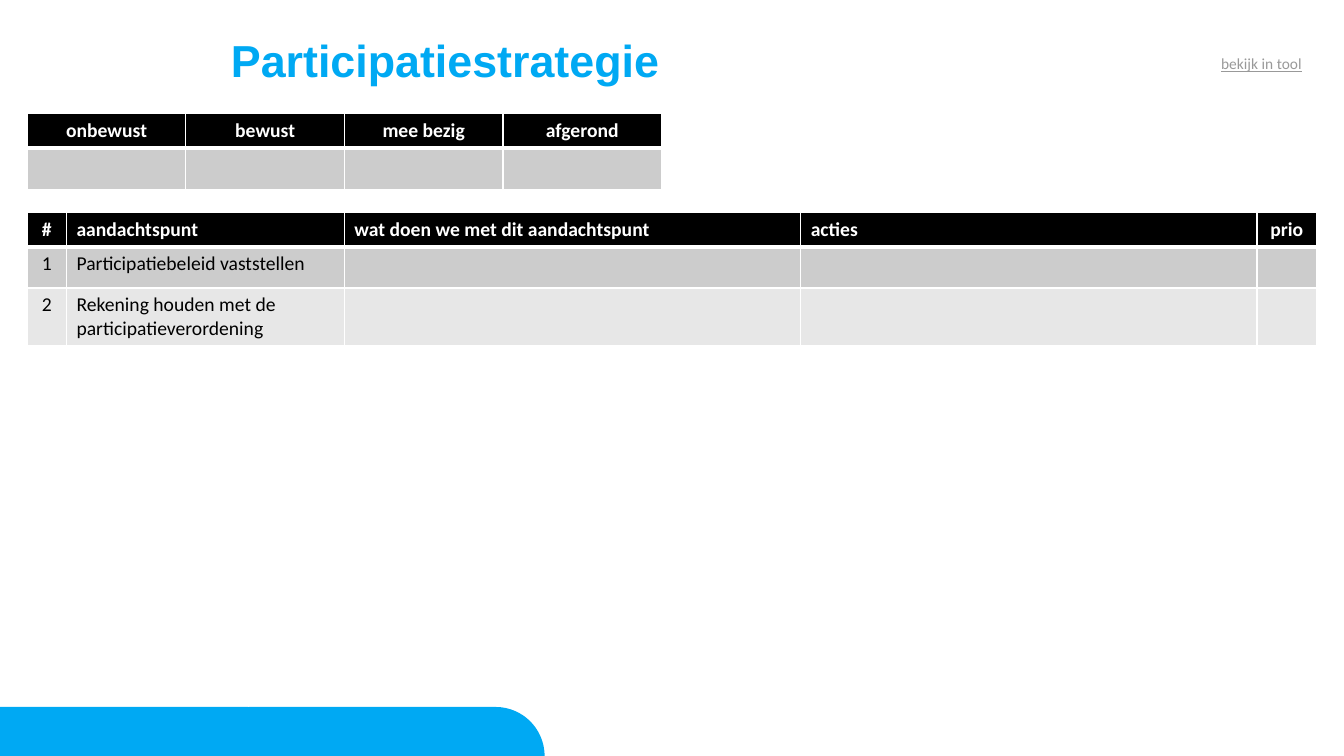
import math
from lxml import etree
from pptx import Presentation
from pptx import util as u
from pptx.dml.color import RGBColor
from pptx.enum import text
from pptx.oxml import ns

COLORS = {
    "blue": "00A9F3",
    "black": "000000",
    "white": "FFFFFF",
    "gray": "999999",
    "band_dark": "CCCCCC",
    "band_light": "E7E7E7",
}


class SlideBuilder:
    body_font = "Calibri"
    title_font = "Arial"
    table_size = 14
    thin, thick = 1, 3

    def __init__(self, slide):
        self.slide = slide

    def color(self, name):
        return RGBColor.from_string(COLORS[name])

    def style(self, paragraph, font_name, size, color, bold=False, underline=None):
        font = paragraph.font
        font.name = font_name
        font.size = u.Pt(size)
        font.bold = bold
        font.underline = underline
        font.color.rgb = self.color(color)

    def text_box(self, content, left, top, width, height, inset, anchor, spacing, **style):
        shape = self.slide.shapes.add_textbox(*map(u.Pt, (left, top, width, height)))
        frame = shape.text_frame
        frame.word_wrap = True
        frame.vertical_anchor = anchor
        frame.margin_left = frame.margin_right = u.Pt(inset)
        frame.margin_top = frame.margin_bottom = u.Pt(inset / 2)
        paragraph = frame.paragraphs[0]
        paragraph.text = content
        paragraph.line_spacing = spacing
        self.style(paragraph, **style)

    def rounded_bar(self, left, top, width, height):
        right, bottom = left + width, top + height
        center = right - height
        angles = [math.radians(degrees) for degrees in range(90, -1, -3)]
        arc = [(center + height * math.cos(a), bottom - height * math.sin(a)) for a in angles]
        points = [(u.Pt(x), u.Pt(y)) for x, y in [(left, bottom), (left, top)] + arc]
        builder = self.slide.shapes.build_freeform(*points[0])
        builder.add_line_segments(points[1:], close=True)
        shape = builder.convert_to_shape()
        shape.shadow.inherit = False
        shape.fill.solid()
        shape.fill.fore_color.rgb = self.color("blue")
        shape.line.fill.background()

    def borders(self, cell, top, bottom):
        properties = cell._tc.get_or_add_tcPr()
        widths = {"lnL": self.thin, "lnR": self.thin, "lnT": top, "lnB": bottom}
        for tag, width in widths.items():
            line = etree.SubElement(properties, ns.qn("a:" + tag), w=str(u.Pt(width)))
            fill = etree.SubElement(line, ns.qn("a:solidFill"))
            etree.SubElement(fill, ns.qn("a:srgbClr"), val=COLORS["white"])

    def table(self, rows, left, top, widths, heights, centered):
        shape = self.slide.shapes.add_table(
            len(rows), len(widths), u.Pt(left), u.Pt(top), u.Pt(sum(widths)), u.Pt(sum(heights)))
        table = shape.table
        for column, width in zip(table.columns, widths):
            column.width = u.Pt(width)
        for row, height in zip(table.rows, heights):
            row.height = u.Pt(height)
        fills = ["black", "band_dark", "band_light"]
        for i, values in enumerate(rows):
            for j, value in enumerate(values):
                cell = table.cell(i, j)
                header = i == 0
                self.borders(cell, self.thick if i == 1 else self.thin,
                             self.thick if header else self.thin)
                cell.fill.solid()
                cell.fill.fore_color.rgb = self.color(fills[i])
                paragraph = cell.text_frame.paragraphs[0]
                paragraph.text = value
                if j in centered:
                    paragraph.alignment = text.PP_ALIGN.CENTER
                self.style(paragraph, self.body_font, self.table_size,
                           "white" if header else "black", bold=header)


def main():
    presentation = Presentation()
    presentation.slide_width = u.Pt(960)
    presentation.slide_height = u.Pt(540)
    slide = presentation.slides.add_slide(presentation.slide_layouts[6])
    builder = SlideBuilder(slide)

    for left in (0, 177.5):
        builder.rounded_bar(left, 505, 211.5, 35)

    builder.text_box("Participatiestrategie", 165, 24.5, 335.5, 41, 0,
                     text.MSO_ANCHOR.MIDDLE, 0.9,
                     font_name=builder.title_font, size=32, color="blue", bold=True)

    margin = 19.5
    header_height, row_height = 24.3, 29.5
    points = [
        ["#", "aandachtspunt", "wat doen we met dit aandachtspunt", "acties", "prio"],
        ["1", "Participatiebeleid vaststellen", "", "", ""],
        ["2", "Rekening houden met de participatieverordening", "", "", ""],
    ]
    builder.table(points, margin, 152, [28, 198.5, 326, 326, 42.5],
                  [header_height, row_height, 41.4], {0, 4})

    phases = ["onbewust", "bewust", "mee bezig", "afgerond"]
    builder.table([phases, [""] * len(phases)], margin, 81.3, [113.3] * len(phases),
                  [header_height, row_height], range(len(phases)))

    builder.text_box("bekijk in tool", 865.2, 35.3, 75, 20.6, 7.2,
                     text.MSO_ANCHOR.TOP, 1.0,
                     font_name=builder.body_font, size=11, color="gray", underline=True)

    presentation.save("out.pptx")


if __name__ == "__main__":
    main()
